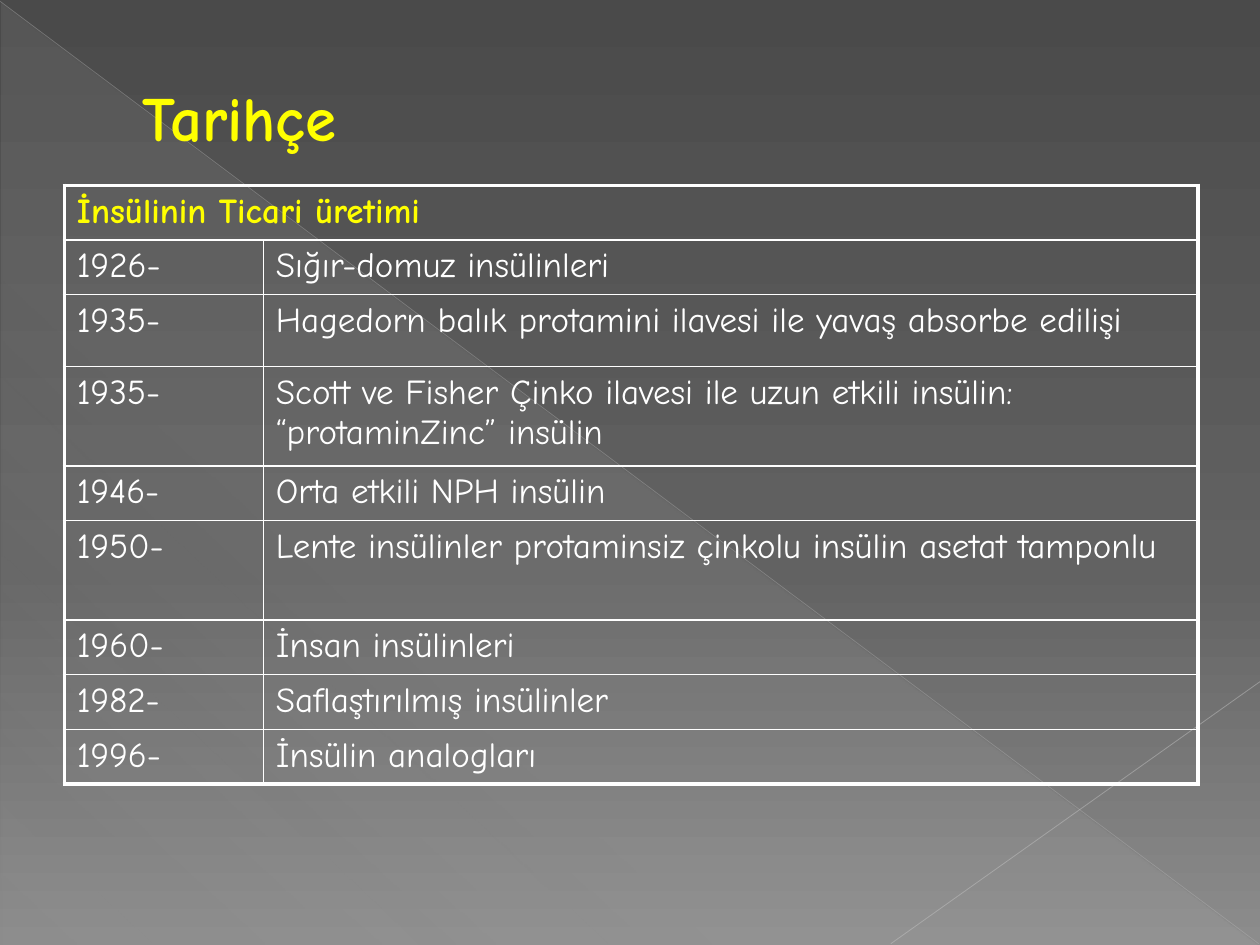
import pptx
import pptx.dml.color
import pptx.enum.shapes
import pptx.enum.text
import pptx.oxml
import pptx.oxml.ns
import pptx.util
from typing import NamedTuple

Inches = pptx.util.Inches
Pt = pptx.util.Pt
NS = pptx.oxml.ns.nsdecls("a")
FONT = "Comic Neue"
WHITE = "FFFFFF"
YELLOW = "FFFF00"


class Stop(NamedTuple):
    pos: int
    color: str
    alpha: int = 100


class Ray(NamedTuple):
    start: tuple[float, float]
    end: tuple[float, float]
    color: str
    width: float
    alpha: int


class Event(NamedTuple):
    year: str
    text: str
    height: float


RAYS = [
    Ray((0, 0.01), (9.99, 7.49), "BFBFBF", 0.39, 35),
    Ray((10, 5.41), (7.07, 7.49), "C6C6C6", 0.47, 45),
]

EVENTS = [
    Event("1926-", "Sığır-domuz insülinleri", 0.43),
    Event("1935-", "Hagedorn balık protamini ilavesi ile yavaş absorbe edilişi", 0.57),
    Event("1935-", "Scott ve Fisher Çinko ilavesi ile uzun etkili insülin: “protaminZinc” insülin", 0.79),
    Event("1946-", "Orta etkili NPH insülin", 0.43),
    Event("1950-", "Lente insülinler protaminsiz çinkolu insülin asetat tamponlu", 0.79),
    Event("1960-", "İnsan insülinleri", 0.43),
    Event("1982-", "Saflaştırılmış insülinler", 0.43),
    Event("1996-", "İnsülin analogları", 0.43),
]


def rgb(color: str) -> pptx.dml.color.RGBColor:
    return pptx.dml.color.RGBColor.from_string(color)


def solid(color: str, alpha: int = 100) -> str:
    return (f'<a:solidFill {NS}><a:srgbClr val="{color}">'
            f'<a:alpha val="{alpha * 1000}"/></a:srgbClr></a:solidFill>')


def blend(fill, stops: list[Stop], angle: int) -> None:
    """Turn a fill into a linear gradient with the given stops."""
    fill.gradient()
    old = fill._fill._gradFill
    marks = "".join(
        f'<a:gs pos="{s.pos * 1000}"><a:srgbClr val="{s.color}">'
        f'<a:alpha val="{s.alpha * 1000}"/></a:srgbClr></a:gs>' for s in stops)
    new = pptx.oxml.parse_xml(
        f'<a:gradFill {NS} rotWithShape="1"><a:gsLst>{marks}</a:gsLst>'
        f'<a:lin ang="{angle * 60000}" scaled="0"/></a:gradFill>')
    old.getparent().replace(old, new)


def draw_ray(slide, ray: Ray) -> None:
    ends = [Inches(v) for v in ray.start + ray.end]
    line = slide.shapes.add_connector(pptx.enum.shapes.MSO_CONNECTOR.STRAIGHT, *ends)
    line.line.width = Pt(ray.width)
    line.line.color.rgb = rgb(ray.color)
    old = line.line._ln.find(pptx.oxml.ns.qn("a:solidFill"))
    line.line._ln.replace(old, pptx.oxml.parse_xml(solid(ray.color, ray.alpha)))
    line._element.spPr.append(pptx.oxml.parse_xml(f"<a:effectLst {NS}/>"))


def style(frame, size: int, color: str, bold: bool) -> None:
    for run in frame.paragraphs[0].runs:
        run.font.name = FONT
        run.font.size = Pt(size)
        run.font.bold = bold
        run.font.color.rgb = rgb(color)


def edge(cell, sides: dict[str, float]) -> None:
    """Give a cell white borders, with widths in points by side."""
    props = cell._tc.get_or_add_tcPr()
    for spot, (side, width) in enumerate(sides.items()):
        props.insert(spot, pptx.oxml.parse_xml(
            f'<a:ln{side} {NS} w="{Pt(width)}">{solid(WHITE)}</a:ln{side}>'))


def draw_table(slide) -> None:
    heights = [0.43] + [event.height for event in EVENTS]
    count = len(heights)
    frame = slide.shapes.add_table(
        count, 2, Inches(0.51), Inches(1.47), Inches(9), Inches(sum(heights)))
    table = frame.table
    table.first_row = table.horz_banding = False
    for col, width in zip(table.columns, (1.58, 7.42)):
        col.width = Inches(width)
    for row, height in zip(table.rows, heights):
        row.height = Inches(height)

    texts = [("İnsülinin Ticari üretimi", "")] + [(e.year, e.text) for e in EVENTS]
    table.cell(0, 0).merge(table.cell(0, 1))
    thick, thin = 2.25, 1
    for r, pair in enumerate(texts):
        for c, text in enumerate(pair):
            cell = table.cell(r, c)
            cell.fill.background()
            edge(cell, {
                "L": thick if c == 0 else thin,
                "R": thick if c == 1 or r == 0 else thin,
                "T": thick if r == 0 else thin,
                "B": thick if r == count - 1 else thin,
            })
            if text:
                cell.text_frame.text = text
                style(cell.text_frame, 20, YELLOW if r == 0 else WHITE, r == 0)


def main() -> None:
    deck = pptx.Presentation()
    deck.slide_width, deck.slide_height = Inches(10), Inches(7.5)
    slide = deck.slides.add_slide(deck.slide_layouts[6])

    # Background with a faint triangle and two rays
    blend(slide.background.fill,
          [Stop(0, "4A4A4A"), Stop(60, "626262"), Stop(100, "8C8C8C")], 90)
    wedge = slide.shapes.add_shape(
        pptx.enum.shapes.MSO_SHAPE.RIGHT_TRIANGLE,
        Inches(0.01), Inches(0.02), Inches(9.98), Inches(7.48))
    wedge.shadow.inherit = False
    wedge.line.fill.background()
    blend(wedge.fill, [Stop(0, "D2D2D2", 10), Stop(70, "D2D2D2", 8),
                       Stop(100, "D2D2D2", 1)], 133)
    for ray in RAYS:
        draw_ray(slide, ray)

    # Title
    box = slide.shapes.add_textbox(Inches(0.5), Inches(0.3), Inches(9), Inches(1.25))
    frame = box.text_frame
    frame.word_wrap = True
    frame.vertical_anchor = pptx.enum.text.MSO_ANCHOR.MIDDLE
    frame.text = "Tarihçe"
    frame.paragraphs[0]._p.get_or_add_pPr().set("marL", str(Inches(0.53)))
    style(frame, 36, YELLOW, True)

    # Timeline of insulin production
    draw_table(slide)
    deck.save("out.pptx")


if __name__ == "__main__":
    main()
